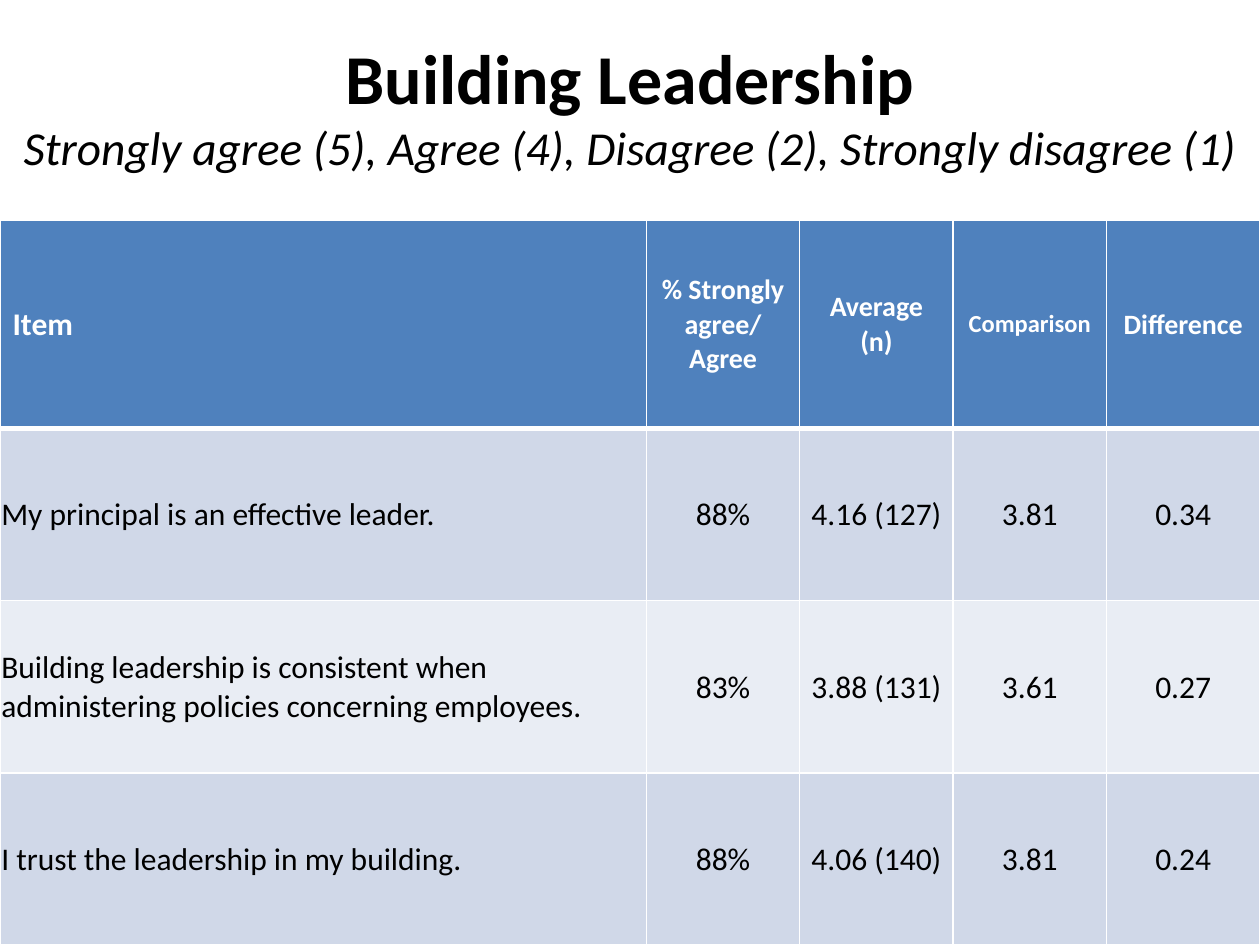
import pptx
import pptx.util
import pptx.dml.color
import pptx.enum.text
from lxml import etree

Pt = pptx.util.Pt
ALIGN = pptx.enum.text.PP_ALIGN
MIDDLE = pptx.enum.text.MSO_ANCHOR.MIDDLE
A = "http://schemas.openxmlformats.org/drawingml/2006/main"

FONT = "Calibri"
WHITE, BLACK, HEADER_BLUE = "FFFFFF", "000000", "4F81BD"
BANDS = ["D0D8E8", "E9EDF4"]

COL_WIDTHS = [369.36] + [87.66] * 4
ROW_HEIGHTS = [118.8] + [98.4] * 3
HEADER = ["Item", "% Strongly agree/ Agree", "Average (n)", "Comparison", "Difference"]
HEADER_SIZES = [18, 16, 16, 14, 16]
RATINGS = [
    ["My principal is an effective leader.", "88%", "4.16 (127)", "3.81", "0.34"],
    ["Building leadership is consistent when administering policies concerning employees.",
     "83%", "3.88 (131)", "3.61", "0.27"],
    ["I trust the leadership in my building.", "88%", "4.06 (140)", "3.81", "0.24"],
]


def rgb(color):
    return pptx.dml.color.RGBColor.from_string(color)


def set_font(font, size, color, bold=False, italic=False):
    font.name = FONT
    font.size = Pt(size)
    font.bold = bold
    font.italic = italic
    font.color.rgb = rgb(color)


def add_title(s, title, scale):
    """Add the bold title with the italic answer scale on the line below."""
    tf = s.shapes.add_textbox(0, 0, Pt(720), Pt(120)).text_frame
    tf.word_wrap = True
    tf.vertical_anchor = MIDDLE
    p = tf.paragraphs[0]
    p.alignment = ALIGN.CENTER
    r = p.add_run()
    r.text = title
    set_font(r.font, 40, BLACK, bold=True)
    p.add_line_break()
    r = p.add_run()
    r.text = scale
    set_font(r.font, 27, BLACK, italic=True)


def set_borders(cell, top, bottom):
    """Draw white borders, 1 pt at the sides; call before filling the cell."""
    tcPr = cell._tc.get_or_add_tcPr()
    for side, width in (("L", 1), ("R", 1), ("T", top), ("B", bottom)):
        ln = etree.SubElement(tcPr, f"{{{A}}}ln{side}", w=str(Pt(width)))
        fill = etree.SubElement(ln, f"{{{A}}}solidFill")
        etree.SubElement(fill, f"{{{A}}}srgbClr", val=WHITE)


def fill_cell(cell, text, fill, size, color, bold, align):
    cell.text = text
    cell.vertical_anchor = MIDDLE
    cell.fill.solid()
    cell.fill.fore_color.rgb = rgb(fill)
    p = cell.text_frame.paragraphs[0]
    p.alignment = align
    set_font(p.font, size, color, bold)


def add_ratings_table(s):
    rows = [HEADER] + RATINGS
    table = s.shapes.add_table(len(rows), len(HEADER), 0, Pt(126), Pt(720), Pt(414)).table
    for col, width in zip(table.columns, COL_WIDTHS):
        col.width = Pt(width)
    for row, height in zip(table.rows, ROW_HEIGHTS):
        row.height = Pt(height)

    for i, texts in enumerate(rows):
        for j, text in enumerate(texts):
            cell = table.cell(i, j)
            align = ALIGN.CENTER if j else ALIGN.LEFT
            set_borders(cell, top=3 if i == 1 else 1, bottom=3 if i == 0 else 1)
            if i == 0:
                fill_cell(cell, text, HEADER_BLUE, HEADER_SIZES[j], WHITE, True, align)
            else:
                fill_cell(cell, text, BANDS[(i - 1) % 2], 18, BLACK, False, align)
                cell.margin_left = cell.margin_right = cell.margin_top = Pt(0.75)
                cell.margin_bottom = 0


def main():
    prs = pptx.Presentation()
    prs.slide_width, prs.slide_height = Pt(720), Pt(540)
    s = prs.slides.add_slide(prs.slide_layouts[6])
    add_title(s, "Building Leadership",
              "Strongly agree (5), Agree (4), Disagree (2), Strongly disagree (1)")
    add_ratings_table(s)
    prs.save("out.pptx")


if __name__ == "__main__":
    main()
